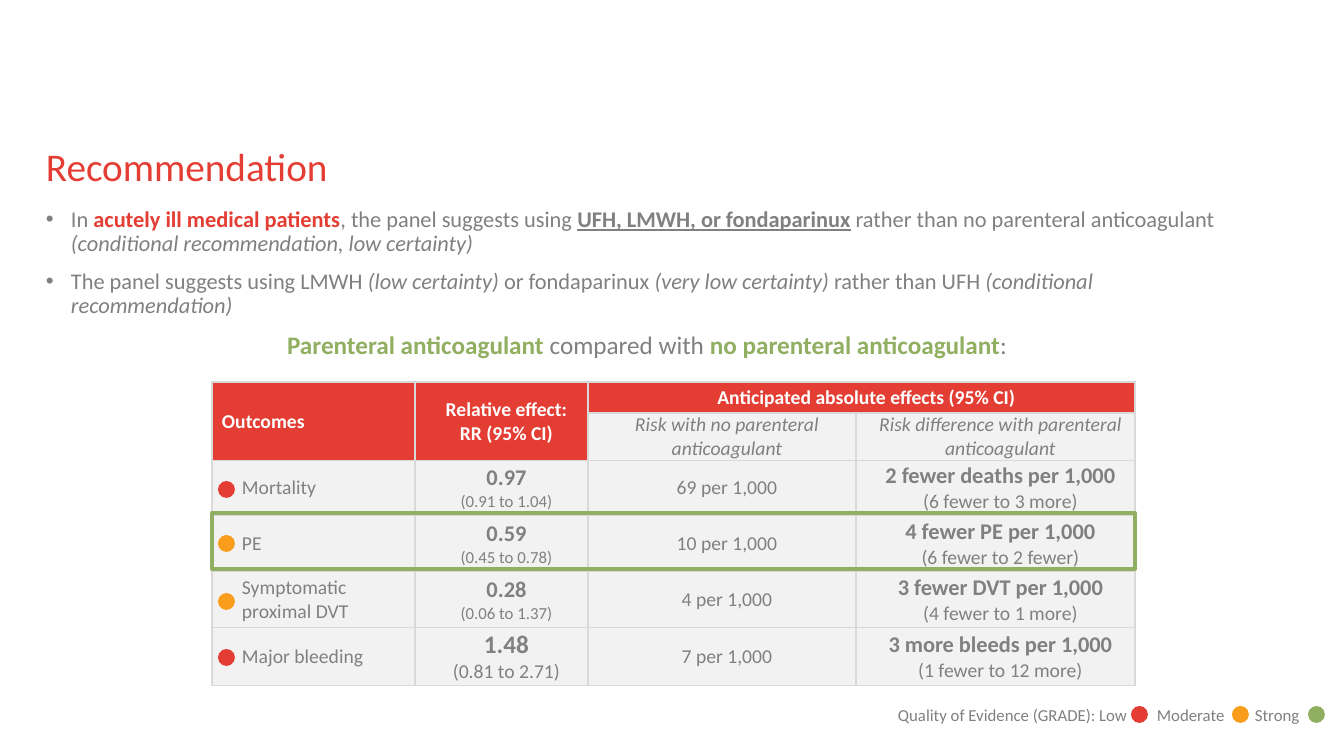
from dataclasses import dataclass
from lxml.etree import SubElement
from pptx import Presentation
from pptx.dml.color import RGBColor
from pptx.enum.shapes import MSO_SHAPE as SHAPE
from pptx.enum.text import MSO_ANCHOR as ANCHOR, MSO_AUTO_SIZE as FIT, PP_ALIGN as ALIGN
from pptx.oxml import parse_xml
from pptx.oxml.ns import nsdecls, qn
from pptx.util import Emu, Pt


@dataclass(frozen=True)
class Theme:
    font: str = "Calibri"
    red: str = "E43D33"
    orange: str = "FA9D1C"
    green: str = "91AF61"
    grey: str = "808080"
    white: str = "FFFFFF"
    pale: str = "F2F2F2"
    rule: str = "D9D9D9"
    title: int = 28
    lead: int = 18
    body: int = 16
    cell: int = 14
    small: int = 12


T = Theme()
PX = 914400 / 100.8
DOT = 17

PLAIN = {"bold": False, "italic": False, "underline": False}
STYLES = {
    "plain": {},
    "italic": {"italic": True},
    "bold": {"bold": True},
    "key": {"bold": True, "underline": True},
    "red": {"bold": True, "color": T.red},
    "green": {"bold": True, "color": T.green},
    "head": {"bold": True, "color": T.white},
    "title": {"color": T.red},
}

BULLETS = [
    [("In ", "plain"), ("acutely ill medical patients", "red"),
     (", the panel suggests using ", "plain"), ("UFH, LMWH, or fondaparinux", "key"),
     (" rather than no parenteral anticoagulant ", "plain"),
     ("(conditional recommendation, low certainty)", "italic")],
    [("The panel suggests using LMWH ", "plain"), ("(low certainty) ", "italic"),
     ("or fondaparinux ", "plain"), ("(very low certainty) ", "italic"),
     ("rather than UFH ", "plain"), ("(conditional recommendation)", "italic")],
]
COMPARISON = [("Parenteral anticoagulant ", "green"), ("compared with ", "plain"),
              ("no parenteral anticoagulant", "green"), (":", "plain")]

COLS = [203, 173, 268, 279]
ROWS = [31, 47, 55, 56, 56, 58]
TABLE_X, TABLE_Y = 212, 382
OUTCOMES = [
    ("Mortality", "0.97", "(0.91 to 1.04)", "69 per 1,000",
     "2 fewer deaths per 1,000", "(6 fewer to 3 more)", T.body, T.small, T.red, 481),
    ("PE", "0.59", "(0.45 to 0.78)", "10 per 1,000",
     "4 fewer PE per 1,000", "(6 fewer to 2 fewer)", T.body, T.small, T.orange, 535),
    ("Symptomatic proximal DVT", "0.28", "(0.06 to 1.37)", "4 per 1,000",
     "3 fewer DVT per 1,000", "(4 fewer to 1 more)", T.body, T.small, T.orange, 593),
    ("Major bleeding", "1.48", "(0.81 to 2.71)", "7 per 1,000",
     "3 more bleeds per 1,000", "(1 fewer to 12 more)", T.lead, T.cell, T.red, 649),
]


def px(n):
    return Emu(round(n * PX))


def apply(obj, **values):
    for name, value in values.items():
        setattr(obj, name, value)


def place(sp, x, y, w, h):
    apply(sp, left=px(x), top=px(y), width=px(w), height=px(h))


def margins(obj, left=0):
    apply(obj, margin_left=px(left), margin_right=0, margin_top=0, margin_bottom=0)


def add_runs(p, runs, size):
    for text, style in runs:
        look = {**PLAIN, "color": T.grey, **STYLES[style]}
        color = look.pop("color")
        r = p.add_run()
        r.text = text
        apply(r.font, name=T.font, size=Pt(size), **look)
        r.font.color.rgb = RGBColor.from_string(color)


def next_paragraph(tf, i):
    return tf.add_paragraph() if i else tf.paragraphs[0]


def set_bullet(p, bullet):
    pPr = p._p.get_or_add_pPr()
    indent = px(25) if bullet else 0
    pPr.set("marL", str(indent))
    pPr.set("indent", str(-indent))
    if bullet:
        SubElement(pPr, qn("a:buChar"), char="•")
    else:
        SubElement(pPr, qn("a:buNone"))


def fill_title(sp):
    place(sp, 46, 148, 1210, 46)
    tf = sp.text_frame
    margins(tf)
    apply(tf, vertical_anchor=ANCHOR.TOP, auto_size=FIT.NONE)
    p = tf.paragraphs[0]
    apply(p, alignment=ALIGN.LEFT, line_spacing=0.9)
    add_runs(p, [("Recommendation", "title")], T.title)


def fill_body(sp):
    place(sp, 46, 208, 1202, 267)
    tf = sp.text_frame
    margins(tf)
    apply(tf, vertical_anchor=ANCHOR.TOP, auto_size=FIT.NONE)
    for i, runs in enumerate([*BULLETS, COMPARISON]):
        bullet = runs is not COMPARISON
        p = next_paragraph(tf, i)
        set_bullet(p, bullet)
        apply(p, alignment=ALIGN.LEFT if bullet else ALIGN.CENTER,
              line_spacing=0.9, space_before=Pt(10 if i else 0))
        add_runs(p, runs, T.body if bullet else T.lead)


def add_borders(cell):
    tcPr = cell._tc.get_or_add_tcPr()
    for i, side in enumerate("LRTB"):
        tcPr.insert(i, parse_xml(
            f'<a:ln{side} {nsdecls("a")} w="12700"><a:solidFill>'
            f'<a:srgbClr val="{T.rule}"/></a:solidFill></a:ln{side}>'))


def fill_cell(cell, lines, align=ALIGN.CENTER, left=10):
    margins(cell, left)
    cell.vertical_anchor = ANCHOR.MIDDLE
    for i, (text, style, size) in enumerate(lines):
        p = next_paragraph(cell.text_frame, i)
        p.alignment = align
        add_runs(p, [(text, style)], size)


def add_table(s):
    frame = s.shapes.add_table(len(ROWS), len(COLS), px(TABLE_X), px(TABLE_Y),
                               px(sum(COLS)), px(sum(ROWS)))
    table = frame.table
    for col, w in zip(table.columns, COLS):
        col.width = px(w)
    for row, h in zip(table.rows, ROWS):
        row.height = px(h)
    for r in range(len(ROWS)):
        for c in range(len(COLS)):
            cell = table.cell(r, c)
            header = r == 0 or (r == 1 and c < 2)
            cell.fill.solid()
            cell.fill.fore_color.rgb = RGBColor.from_string(T.red if header else T.pale)
            add_borders(cell)
    for first, last in [((0, 0), (1, 0)), ((0, 1), (1, 1)), ((0, 2), (0, 3))]:
        table.cell(*first).merge(table.cell(*last))
    fill_cell(table.cell(0, 0), [("Outcomes", "head", T.cell)], ALIGN.LEFT)
    fill_cell(table.cell(0, 1), [("Relative effect:", "head", T.cell),
                                 ("RR (95% CI)", "head", T.cell)])
    fill_cell(table.cell(0, 2), [("Anticipated absolute effects (95% CI)", "head", T.cell)])
    for c, text in [(2, "Risk with no parenteral anticoagulant"),
                    (3, "Risk difference with parenteral anticoagulant")]:
        fill_cell(table.cell(1, c), [(text, "italic", T.cell)])
    for r, (name, rr, ci, risk, diff, span, big, small, *_) in enumerate(OUTCOMES, 2):
        fill_cell(table.cell(r, 0), [(name, "plain", T.cell)], ALIGN.LEFT, 30)
        fill_cell(table.cell(r, 1), [(rr, "bold", big), (ci, "plain", small)])
        fill_cell(table.cell(r, 2), [(risk, "plain", T.cell)])
        fill_cell(table.cell(r, 3), [(diff, "bold", T.body), (span, "plain", T.cell)])


def add_dot(shapes, x, y, color):
    sp = shapes.add_shape(SHAPE.OVAL, px(x), px(y), px(DOT), px(DOT))
    sp.shadow.inherit = False
    sp.fill.solid()
    sp.fill.fore_color.rgb = RGBColor.from_string(color)
    sp.line.fill.background()


def add_highlight(s):
    sp = s.shapes.add_shape(SHAPE.RECTANGLE, px(TABLE_X), px(513), px(sum(COLS)), px(56))
    sp.shadow.inherit = False
    sp.fill.background()
    sp.line.color.rgb = RGBColor.from_string(T.green)
    sp.line.width = Pt(3)


def add_legend(s):
    shapes = s.shapes.add_group_shape().shapes
    tf = shapes.add_textbox(px(888), px(700), px(456), px(30)).text_frame
    apply(tf, word_wrap=True, auto_size=FIT.SHAPE_TO_FIT_TEXT)
    p = tf.paragraphs[0]
    tabs = SubElement(p._p.get_or_add_pPr(), qn("a:tabLst"))
    for x in (259, 357):
        SubElement(tabs, qn("a:tab"), pos=str(px(x)), algn="l")
    add_runs(p, [("Quality of Evidence (GRADE): Low\tModerate\tStrong", "plain")], T.small)
    for x, color in [(1131, T.red), (1232, T.orange), (1308, T.green)]:
        add_dot(shapes, x, 706, color)


def main():
    prs = Presentation()
    apply(prs, slide_width=px(1344), slide_height=px(756))
    s = prs.slides.add_slide(prs.slide_layouts[1])
    add_table(s)
    add_highlight(s)
    fill_title(s.shapes.title)
    fill_body(s.placeholders[1])
    add_legend(s)
    for *_, color, y in OUTCOMES:
        add_dot(s.shapes, 218, y, color)
    prs.save("out.pptx")


if __name__ == "__main__":
    main()
